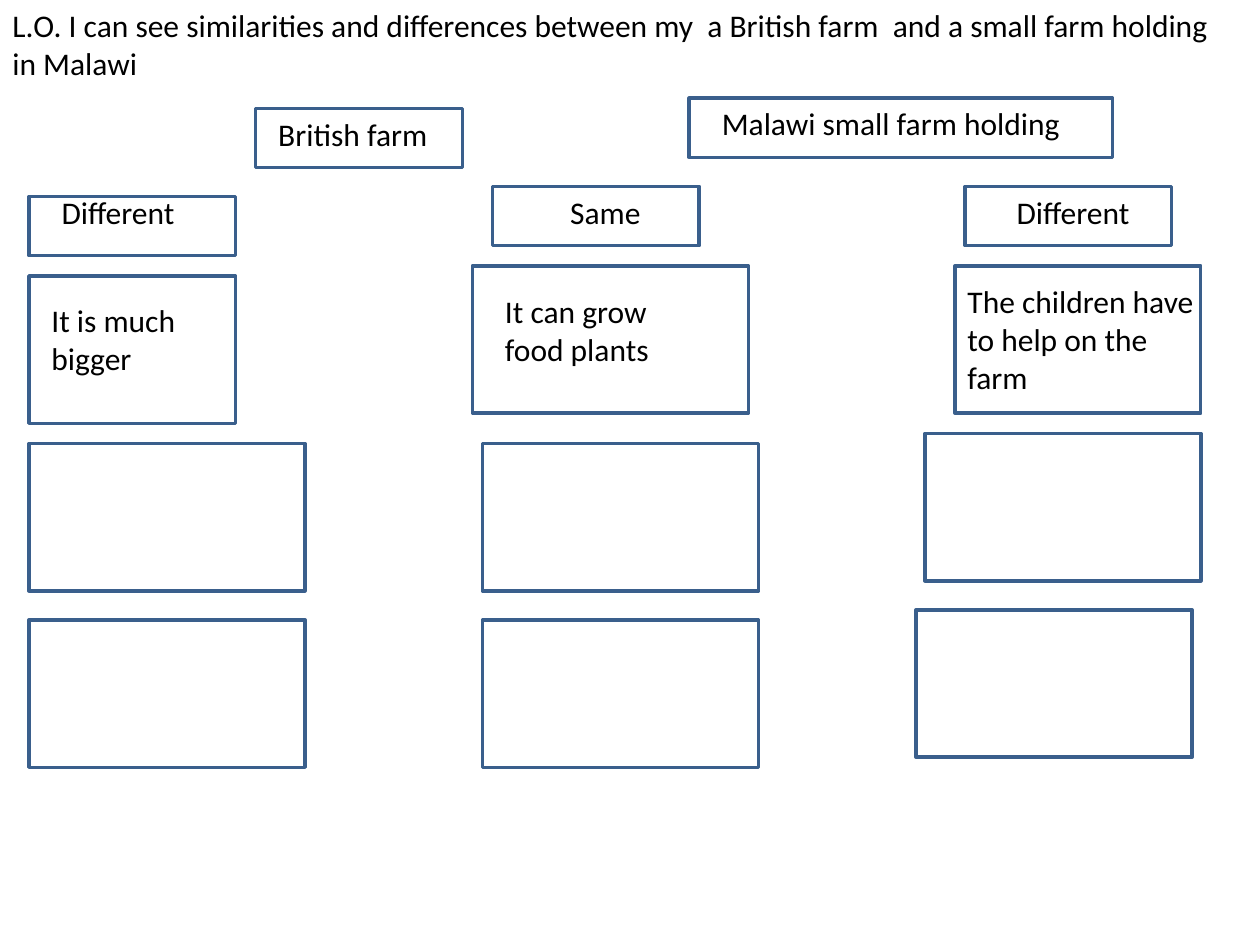
from pptx import Presentation
from pptx.dml.color import RGBColor
from pptx.enum import shapes, text
from pptx.util import Inches, Pt

FONT = "Calibri"
BLACK = "000000"
BLUE = "3A5F8C"
LABEL_WIDTH, LABEL_HEIGHT = 1.64, 0.47
ANSWER_WIDTH, ANSWER_HEIGHT = 2.19, 1.17
LINE_HEIGHT, TEXT_PADDING = 0.305, 0.1

# Outlined boxes: left, top, width
LABEL_BOXES = [
    (2.03, 0.86, LABEL_WIDTH),
    (5.47, 0.78, 3.36),
    (0.23, 1.56, LABEL_WIDTH),
    (3.91, 1.48, LABEL_WIDTH),
    (7.66, 1.48, LABEL_WIDTH),
]
EXAMPLE_BOXES = [(0.23, 2.19, 1.64), (3.75, 2.11, 2.19), (7.58, 2.11, 1.95)]

# Empty boxes to fill in: lefts of the two rows, top of the first row
ANSWER_COLUMNS = [((0.23, 0.23), 3.52), ((3.83, 3.83), 3.52), ((7.34, 7.27), 3.44)]
ANSWER_STEP = 1.4

# Wording: text, left, top, width, number of lines
LEFT, CENTER = text.PP_ALIGN.LEFT, text.PP_ALIGN.CENTER
WORDING = [
    ("L.O. I can see similarities and differences between my  a British farm  "
     "and a small farm holding in Malawi", 0, 0, 9.69, 2, LEFT),
    ("British farm", 2.11, 0.86, 1.88, 1, LEFT),
    ("Malawi small farm holding", 5.63, 0.78, 3.28, 1, LEFT),
    ("Different", 0.39, 1.48, 1.95, 1, LEFT),
    ("Same", 4.14, 1.48, 1.33, 1, CENTER),
    ("Different", 7.97, 1.48, 1.56, 1, LEFT),
    ("It is much bigger", 0.31, 2.34, 1.41, 2, LEFT),
    ("It can grow food plants", 3.91, 2.27, 1.8, 2, LEFT),
    ("The children have to help on the farm", 7.58, 2.19, 2.03, 3, LEFT),
]


def color(hex_value):
    return RGBColor.from_string(hex_value)


def add_box(slide, left, top, width, height):
    shape = slide.shapes.add_shape(
        shapes.MSO_SHAPE.RECTANGLE,
        Inches(left), Inches(top), Inches(width), Inches(height))
    shape.shadow.inherit = False
    shape.fill.background()
    shape.line.color.rgb = color(BLUE)
    shape.line.width = Pt(2)


def add_text(slide, wording, left, top, width, lines, alignment):
    height = lines * LINE_HEIGHT + TEXT_PADDING
    text_box = slide.shapes.add_textbox(
        Inches(left), Inches(top), Inches(width), Inches(height))
    text_frame = text_box.text_frame
    text_frame.word_wrap = True
    text_frame.auto_size = text.MSO_AUTO_SIZE.SHAPE_TO_FIT_TEXT
    text_frame.text = wording
    paragraph = text_frame.paragraphs[0]
    paragraph.alignment = alignment
    font = paragraph.runs[0].font
    font.name = FONT
    font.size = Pt(18)
    font.color.rgb = color(BLACK)


def main():
    presentation = Presentation()
    presentation.slide_width = Inches(10)
    presentation.slide_height = Inches(7.5)
    slide = presentation.slides.add_slide(presentation.slide_layouts[6])

    # Boxes for headings and worked examples
    for left, top, width in LABEL_BOXES:
        add_box(slide, left, top, width, LABEL_HEIGHT)
    for left, top, width in EXAMPLE_BOXES:
        add_box(slide, left, top, width, ANSWER_HEIGHT)

    # Empty answer boxes
    for lefts, first_top in ANSWER_COLUMNS:
        for row, left in enumerate(lefts):
            add_box(slide, left, first_top + row * ANSWER_STEP,
                    ANSWER_WIDTH, ANSWER_HEIGHT)

    # Learning objective, headings and examples
    for item in WORDING:
        add_text(slide, *item)

    presentation.save("out.pptx")


if __name__ == "__main__":
    main()
